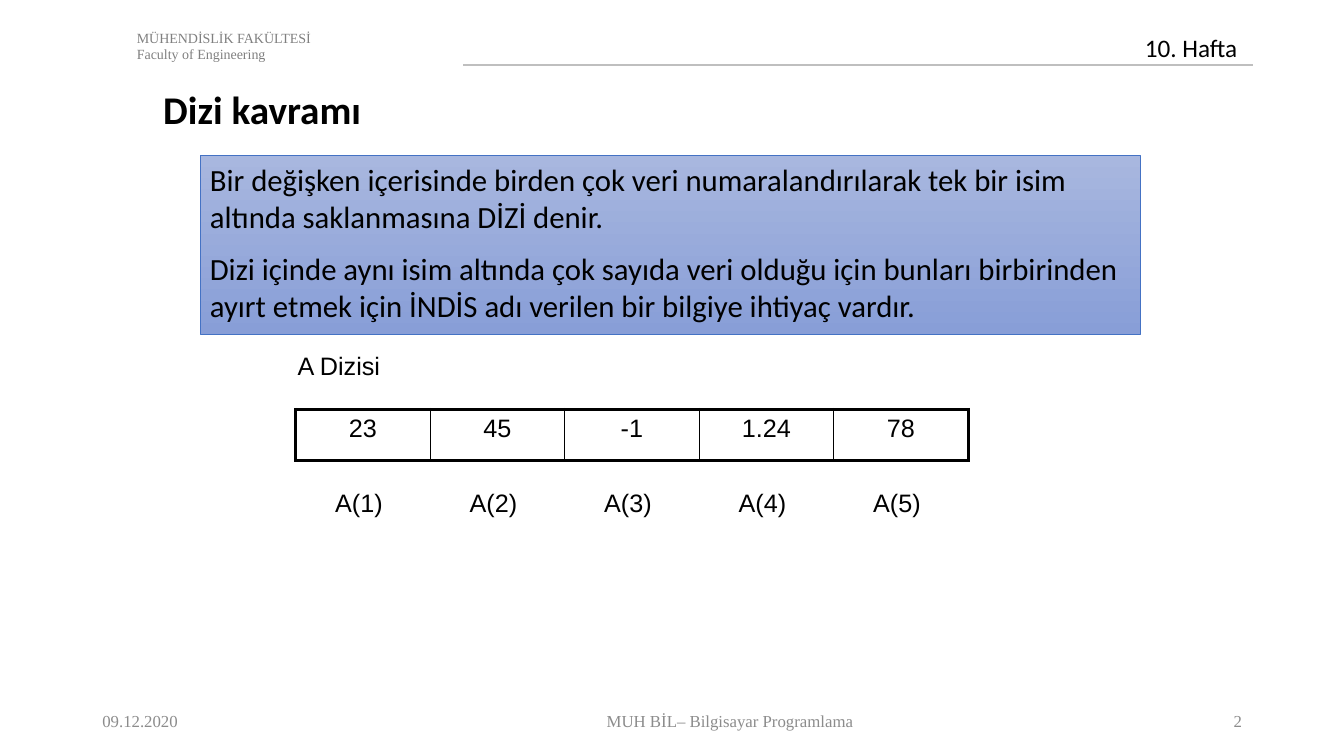
from dataclasses import dataclass

from lxml import etree
from pptx import Presentation
from pptx import util as u
from pptx.dml.color import RGBColor
from pptx.enum import shapes, text
from pptx.oxml.ns import qn

LEFT, CENTER, RIGHT = text.PP_ALIGN.LEFT, text.PP_ALIGN.CENTER, text.PP_ALIGN.RIGHT
TOP, MIDDLE = text.MSO_ANCHOR.TOP, text.MSO_ANCHOR.MIDDLE
THIN, THICK = 1, 2.25


def font(name, size, color="000000", bold=False):
    return {"name": name, "size": u.Pt(size), "bold": bold, "color": color}


@dataclass(frozen=True)
class Theme:
    title = font("Calibri", 28, bold=True)
    week = font("Calibri", 18)
    body = font("Calibri", 22)
    array = font("Arial", 18)
    faculty = font("Times New Roman", 10, "808080")
    footer = font("Times New Roman", 12, "8C8C8C")
    rule = "BFBFBF"
    panel = ("A8B7DF", "889ED7")
    panel_line = "4472C4"
    border = "000000"


class SlideBuilder:
    def __init__(self, prs, theme):
        self.theme = theme
        self.slide = prs.slides.add_slide(prs.slide_layouts[5])
        self.shapes = self.slide.shapes

    def fill_frame(self, tf, lines, style, align=LEFT, anchor=TOP, gap=0):
        for name, value in {"word_wrap": True, "vertical_anchor": anchor,
                            "auto_size": text.MSO_AUTO_SIZE.NONE}.items():
            setattr(tf, name, value)
        self.fill_paragraphs(tf, lines, style, align, gap)

    def fill_paragraphs(self, tf, lines, style, align, gap=0):
        for i, line in enumerate(lines):
            p = tf.add_paragraph() if i else tf.paragraphs[0]
            p.alignment = align
            p.space_before = u.Pt(gap if i else 0)
            r = p.add_run()
            r.text = line
            for name, value in style.items():
                if name == "color":
                    r.font.color.rgb = RGBColor.from_string(value)
                else:
                    setattr(r.font, name, value)

    def title(self, box, line):
        sp = self.shapes.title
        sp.left, sp.top, sp.width, sp.height = map(u.Cm, box)
        self.fill_frame(sp.text_frame, [line], self.theme.title)

    def label(self, box, lines, style, **layout):
        sp = self.shapes.add_textbox(*map(u.Cm, box))
        self.fill_frame(sp.text_frame, lines, style, **layout)

    def rule(self, x1, x2, y):
        line = self.shapes.add_connector(
            shapes.MSO_CONNECTOR.STRAIGHT, *map(u.Cm, (x1, y, x2, y)))
        line.line.color.rgb = RGBColor.from_string(self.theme.rule)
        line.line.width = u.Pt(1.5)
        etree.SubElement(line._element.spPr, qn("a:effectLst"))

    def panel(self, box, lines):
        sp = self.shapes.add_shape(shapes.MSO_SHAPE.RECTANGLE, *map(u.Cm, box))
        sp.shadow.inherit = False
        sp.fill.gradient()
        sp.fill.gradient_angle = 270
        for i, (stop, color) in enumerate(zip(sp.fill.gradient_stops, self.theme.panel)):
            stop.position = i
            stop.color.rgb = RGBColor.from_string(color)
        sp.line.color.rgb = RGBColor.from_string(self.theme.panel_line)
        sp.line.width = u.Pt(0.5)
        self.fill_frame(sp.text_frame, lines, self.theme.body, gap=11)

    def row_table(self, left, top, values, bordered=False):
        """One-row table; bordered gives a thick frame with thin dividers."""
        col, height, last = 3.39, 1.3, len(values) - 1
        frame = self.shapes.add_table(
            1, len(values), *map(u.Cm, (left, top, col * len(values), height)))
        table = frame.table
        table.first_row = table.horz_banding = False
        for i, value in enumerate(values):
            table.columns[i].width = u.Cm(col)
            cell = table.cell(0, i)
            self.fill_paragraphs(cell.text_frame, [value], self.theme.array, CENTER)
            sides = {"L": THIN if i else THICK, "R": THIN if i < last else THICK,
                     "T": THICK, "B": THICK}
            for side, width in sides.items():
                self.border(cell, side, width if bordered else 0)
            cell.fill.background()

    def border(self, cell, side, width):
        ln = etree.SubElement(cell._tc.get_or_add_tcPr(), qn(f"a:ln{side}"))
        ln.set("w", str(u.Pt(width)))
        if width:
            fill = etree.SubElement(ln, qn("a:solidFill"))
            etree.SubElement(fill, qn("a:srgbClr")).set("val", self.theme.border)
        else:
            etree.SubElement(ln, qn("a:noFill"))


def main():
    prs = Presentation()
    prs.slide_width, prs.slide_height = u.Cm(33.87), u.Cm(19.05)
    theme = Theme()
    s = SlideBuilder(prs, theme)

    s.rule(11.68, 31.57, 1.63)
    s.label((3.2, 0.61, 16.94, 1.12),
            ["MÜHENDİSLİK FAKÜLTESİ", "Faculty of Engineering"], theme.faculty)
    s.label((28.6, 0.69, 3, 1.02), ["10. Hafta"], theme.week)
    s.title((3.86, 2.01, 11.96, 1.45), "Dizi kavramı")

    s.panel((5.04, 3.92, 23.7, 4.5), [
        "Bir değişken içerisinde birden çok veri numaralandırılarak tek bir isim "
        "altında saklanmasına DİZİ denir.",
        "Dizi içinde aynı isim altında çok sayıda veri olduğu için bunları birbirinden "
        "ayırt etmek için İNDİS adı verilen bir bilgiye ihtiyaç vardır.",
    ])

    array = ["23", "45", "-1", "1.24", "78"]
    s.label((7.25, 8.71, 3.4, 1.02), ["A Dizisi"], theme.array)
    s.row_table(7.45, 10.31, array, bordered=True)
    s.row_table(7.35, 12.22, [f"A({i})" for i in range(1, len(array) + 1)])

    for left, width, line, align in (
        (2.33, 4, "09.12.2020", LEFT),
        (6.93, 22.94, "MUH BİL– Bilgisayar Programlama", CENTER),
        (30.4, 1.15, "2", RIGHT),
    ):
        s.label((left, 17.65, width, 1.02), [line], theme.footer,
                align=align, anchor=MIDDLE)

    prs.save("out.pptx")


if __name__ == "__main__":
    main()
